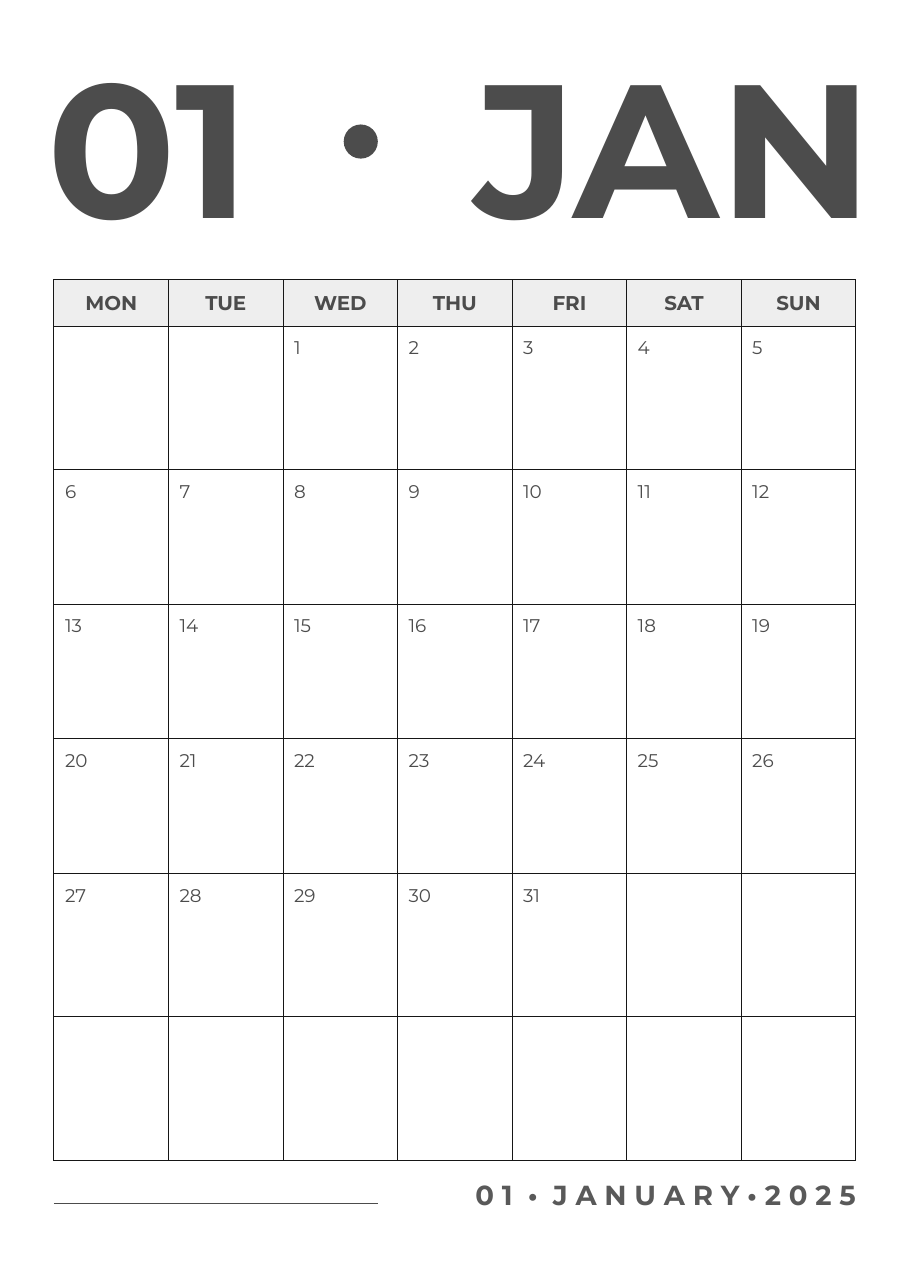
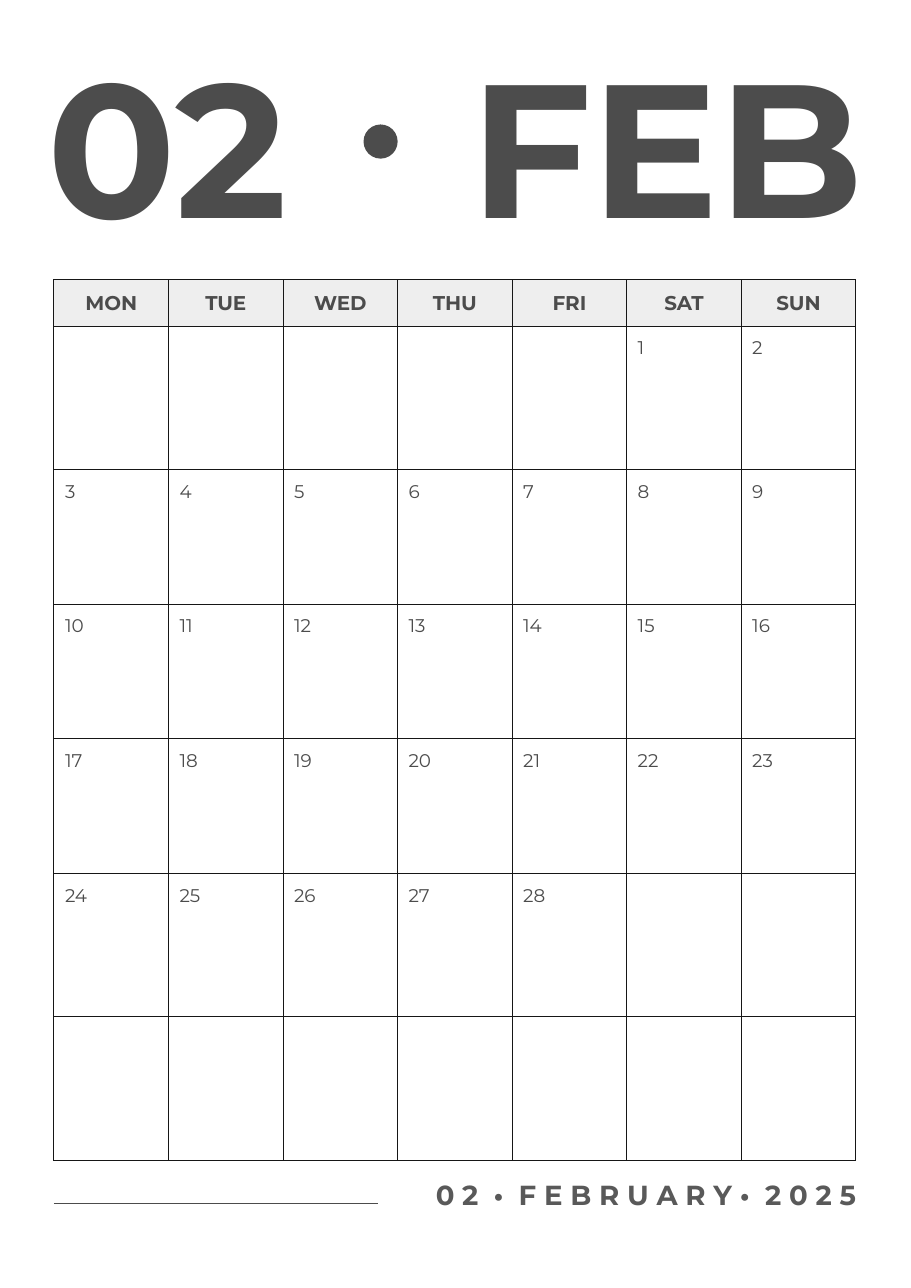
from lxml.etree import SubElement
from pptx import Presentation
from pptx.dml.color import RGBColor
from pptx.enum.shapes import MSO_CONNECTOR, MSO_SHAPE
from pptx.enum.text import MSO_ANCHOR, PP_ALIGN
from pptx.oxml.ns import qn
from pptx.util import Inches, Pt

INK = RGBColor(0x4C, 0x4C, 0x4C)
FOOTER_INK = RGBColor(0x59, 0x59, 0x59)
GRID = RGBColor(0x16, 0x16, 0x16)
HEADER_FILL = RGBColor(0xEE, 0xEE, 0xEE)
FONT = "Montserrat"

WEEKDAYS = ["MON", "TUE", "WED", "THU", "FRI", "SAT", "SUN"]
WEEKS = 6
LEFT, TABLE_TOP, COLUMN_WIDTH = 0.49, 2.54, 1.04
HEADER_HEIGHT, DATE_HEIGHT, BLANK_DATE_HEIGHT, NOTE_HEIGHT = 0.42, 0.4, 0.48, 0.82
WIDE_GAP = 4.8  # extra points after a wide space

# first is the weekday of day 1, counted from Monday
MONTHS = [
    dict(number="01", name="JANUARY", first=2, days=31, number_width=2.17,
         name_left=3.58, dot_left=3.12, year_gap=0),
    dict(number="02", name="FEBRUARY", first=5, days=28, number_width=2.69,
         name_left=3.5, dot_left=3.3, year_gap=WIDE_GAP),
]


class CalendarDeck:
    def __init__(self):
        self.presentation = Presentation()
        self.presentation.slide_width = Inches(8.27)
        self.presentation.slide_height = Inches(11.69)
        self.slide = None

    def new_slide(self):
        self.slide = self.presentation.slides.add_slide(self.presentation.slide_layouts[6])

    def add_run(self, paragraph, text, size, color=INK, bold=True, spacing=0):
        run = paragraph.add_run()
        run.text = text
        font = run.font
        font.name, font.size, font.bold = FONT, Pt(size), bold
        font.color.rgb = color
        if spacing:
            font._element.set("spc", str(round(spacing * 100)))

    def text(self, left, top, width, height, runs, size, color=INK,
             align=PP_ALIGN.LEFT, inset_top=0):
        """Write runs given as (text, letter spacing) pairs."""
        box = self.slide.shapes.add_textbox(
            Inches(left), Inches(top), Inches(width), Inches(height))
        frame = box.text_frame
        frame.word_wrap = True
        frame.margin_left = frame.margin_right = frame.margin_bottom = 0
        frame.margin_top = Inches(inset_top)
        paragraph = frame.paragraphs[0]
        paragraph.alignment = align
        for text, spacing in runs:
            self.add_run(paragraph, text, size, color, spacing=spacing)

    def dot(self, left, top, diameter):
        shape = self.slide.shapes.add_shape(
            MSO_SHAPE.OVAL, Inches(left), Inches(top), Inches(diameter), Inches(diameter))
        shape.shadow.inherit = False
        shape.fill.solid()
        shape.fill.fore_color.rgb = INK
        shape.line.fill.background()

    def rule(self, left, right, y):
        connector = self.slide.shapes.add_connector(
            MSO_CONNECTOR.STRAIGHT, Inches(left), Inches(y), Inches(right), Inches(y))
        connector.line.color.rgb = INK
        connector.line.width = Pt(0.75)
        SubElement(connector._element.spPr, qn("a:effectLst"))

    def cell(self, cell, sides, text="", size=12, bold=False, fill=None, margin=0.0,
             align=PP_ALIGN.LEFT, anchor=MSO_ANCHOR.TOP):
        cell.margin_left = cell.margin_right = Inches(margin)
        cell.margin_top = cell.margin_bottom = Inches(margin)
        cell.vertical_anchor = anchor
        # Borders come before the fill in the cell properties
        properties = cell._tc.get_or_add_tcPr()
        for side in "LRTB":
            line = SubElement(properties, qn(f"a:ln{side}"), w=str(Pt(0.75)))
            if side in sides:
                solid = SubElement(line, qn("a:solidFill"))
                SubElement(solid, qn("a:srgbClr"), val=str(GRID))
            else:
                SubElement(line, qn("a:noFill"))
        if fill is None:
            cell.fill.background()
        else:
            cell.fill.solid()
            cell.fill.fore_color.rgb = fill
        if text:
            paragraph = cell.text_frame.paragraphs[0]
            paragraph.alignment = align
            self.add_run(paragraph, text, size, bold=bold)

    def month_table(self, first, days):
        """One header row, then a date row and a note row for each week."""
        frame = self.slide.shapes.add_table(
            1 + 2 * WEEKS, len(WEEKDAYS), Inches(LEFT), Inches(TABLE_TOP),
            Inches(COLUMN_WIDTH * len(WEEKDAYS)), Inches(8))
        table = frame.table
        table.first_row = table.horz_banding = False

        table.rows[0].height = Inches(HEADER_HEIGHT)
        for column, weekday in enumerate(WEEKDAYS):
            table.columns[column].width = Inches(COLUMN_WIDTH)
            self.cell(table.cell(0, column), "LRTB", weekday, 13, True, HEADER_FILL,
                      align=PP_ALIGN.CENTER, anchor=MSO_ANCHOR.MIDDLE)

        for week in range(WEEKS):
            date_row = 1 + 2 * week
            start = week * len(WEEKDAYS) - first + 1
            dates = [day if 1 <= day <= days else ""
                     for day in range(start, start + len(WEEKDAYS))]
            height = DATE_HEIGHT if all(dates) else BLANK_DATE_HEIGHT
            table.rows[date_row].height = Inches(height)
            table.rows[date_row + 1].height = Inches(NOTE_HEIGHT)
            for column, date in enumerate(dates):
                self.cell(table.cell(date_row, column), "LRT", str(date),
                          margin=0.1 if date else 0)
                self.cell(table.cell(date_row + 1, column), "LRB")

    def title(self, number, name, number_width, name_left, dot_left):
        self.text(0.43, 0.21, number_width, 2.09, [(number, 0)], 124, inset_top=0.05)
        self.text(name_left, 0.21, 4.34, 2.09, [(name[:3], 0)], 124,
                  align=PP_ALIGN.RIGHT, inset_top=0.05)
        self.dot(dot_left, 1.13, 0.31)

    def footer(self, number, name, year_gap):
        self.rule(LEFT, 3.43, 10.92)
        runs = [(" ".join(number), 0), (" ", WIDE_GAP), ("•", 0), (" ", WIDE_GAP),
                (" ".join(name) + " •", 0), (" ", year_gap), ("2 0 2 5", 0)]
        self.text(3.79, 10.69, 3.98, 0.3, runs, 18, FOOTER_INK, PP_ALIGN.RIGHT)

    def month(self, number, name, first, days, number_width, name_left, dot_left, year_gap):
        self.new_slide()
        self.month_table(first, days)
        self.title(number, name, number_width, name_left, dot_left)
        self.footer(number, name, year_gap)


def main():
    deck = CalendarDeck()
    for month in MONTHS:
        deck.month(**month)
    deck.presentation.save("out.pptx")


if __name__ == "__main__":
    main()
